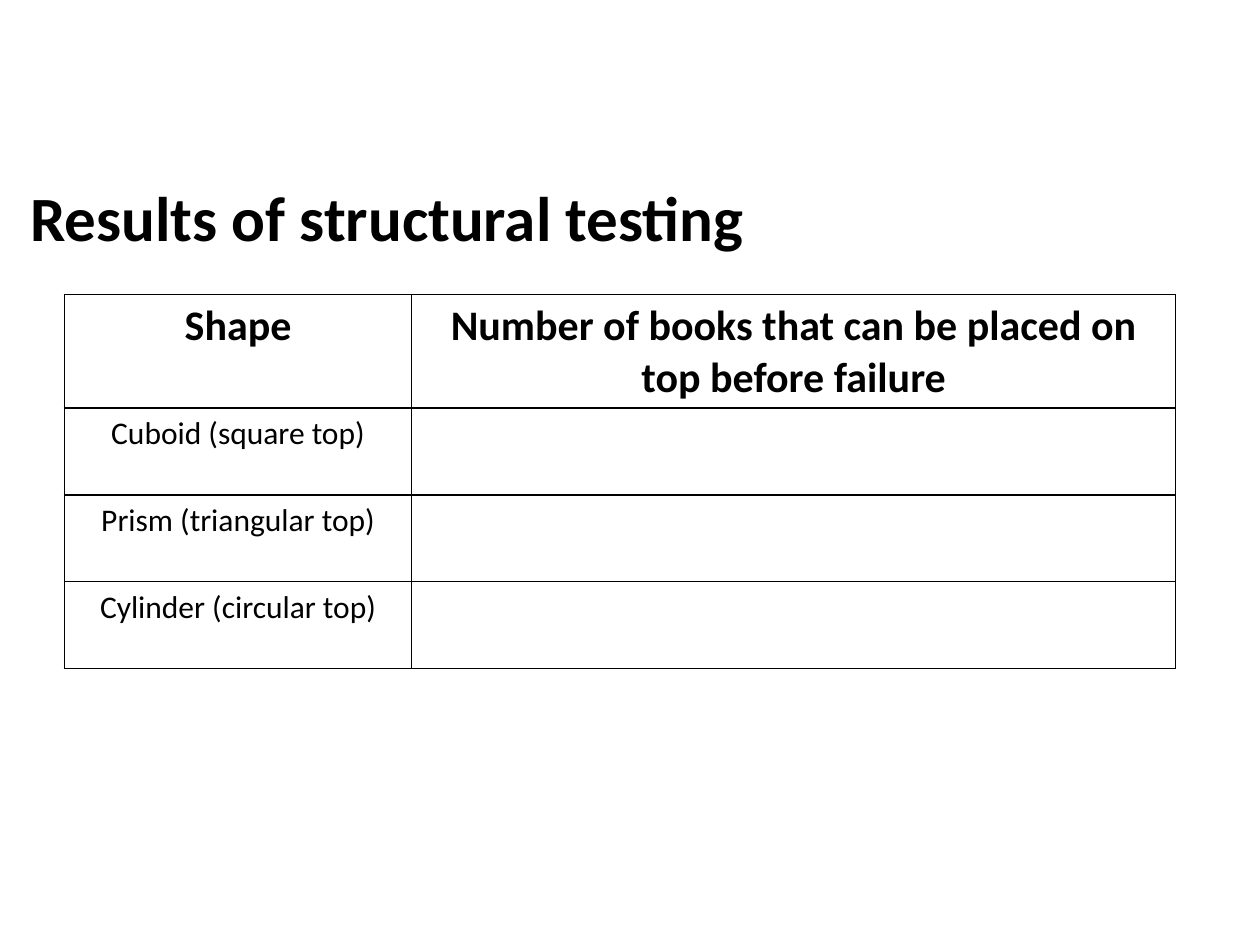
from dataclasses import dataclass

from lxml import etree
from pptx import Presentation
from pptx.dml.color import RGBColor
from pptx.enum.text import MSO_AUTO_SIZE, PP_ALIGN
from pptx.oxml.ns import qn
from pptx.util import Cm, Pt

CENTER = PP_ALIGN.CENTER
FIT_SHAPE = MSO_AUTO_SIZE.SHAPE_TO_FIT_TEXT
FONT = "Calibri"
COLORS = {"ink": "000000", "paper": "FFFFFF"}
BORDER_SIDES = ("a:lnL", "a:lnR", "a:lnT", "a:lnB")
COLUMN_WIDTHS = (Cm(7), Cm(15.4))
ROW_HEIGHT = Cm(1.75)


@dataclass
class TableRow:
    shape: str
    books: str = ""
    size: int = 18
    bold: bool = False


ROWS = [
    TableRow("Shape", "Number of books that can be placed on top before failure", 24, True),
    TableRow("Cuboid (square top)"),
    TableRow("Prism (triangular top)"),
    TableRow("Cylinder (circular top)"),
]


def write(para, text: str, size: int, bold: bool) -> None:
    para.text = text
    para.font.name = FONT
    para.font.size = Pt(size)
    para.font.bold = bold
    para.font.color.rgb = RGBColor.from_string(COLORS["ink"])


def add_borders(cell) -> None:
    """Draw a thin line on each side; borders must precede the cell fill."""
    properties = cell._tc.get_or_add_tcPr()
    for position, side in enumerate(BORDER_SIDES):
        line = etree.Element(qn(side), w=str(Pt(1)))
        fill = etree.SubElement(line, qn("a:solidFill"))
        etree.SubElement(fill, qn("a:srgbClr"), val=COLORS["ink"])
        properties.insert(position, line)


def add_title(page, text: str) -> None:
    box = page.shapes.add_textbox(Cm(0.36), Cm(3.48), Cm(24.36), Cm(1.8))
    frame = box.text_frame
    frame.word_wrap = True
    frame.auto_size = FIT_SHAPE
    write(frame.paragraphs[0], text, 36, True)


def add_results_table(page, rows: list[TableRow]) -> None:
    frame = page.shapes.add_table(
        len(rows), len(COLUMN_WIDTHS), Cm(1.3), Cm(5.94),
        sum(COLUMN_WIDTHS), ROW_HEIGHT * len(rows),
    )
    table = frame.table
    table.horz_banding = False
    for column, width in zip(table.columns, COLUMN_WIDTHS):
        column.width = width
    for row, content in zip(table.rows, rows):
        row.height = ROW_HEIGHT
        for cell, text in zip(row.cells, (content.shape, content.books)):
            cell.fill.solid()
            cell.fill.fore_color.rgb = RGBColor.from_string(COLORS["paper"])
            add_borders(cell)
            para = cell.text_frame.paragraphs[0]
            para.alignment = CENTER
            write(para, text, content.size, content.bold)


def main() -> None:
    deck = Presentation()
    deck.slide_width, deck.slide_height = Cm(25.4), Cm(19.05)
    page = deck.slides.add_slide(deck.slide_layouts[6])

    # Heading
    add_title(page, "Results of structural testing")

    # Results to be filled in
    add_results_table(page, ROWS)

    deck.save("out.pptx")


if __name__ == "__main__":
    main()
